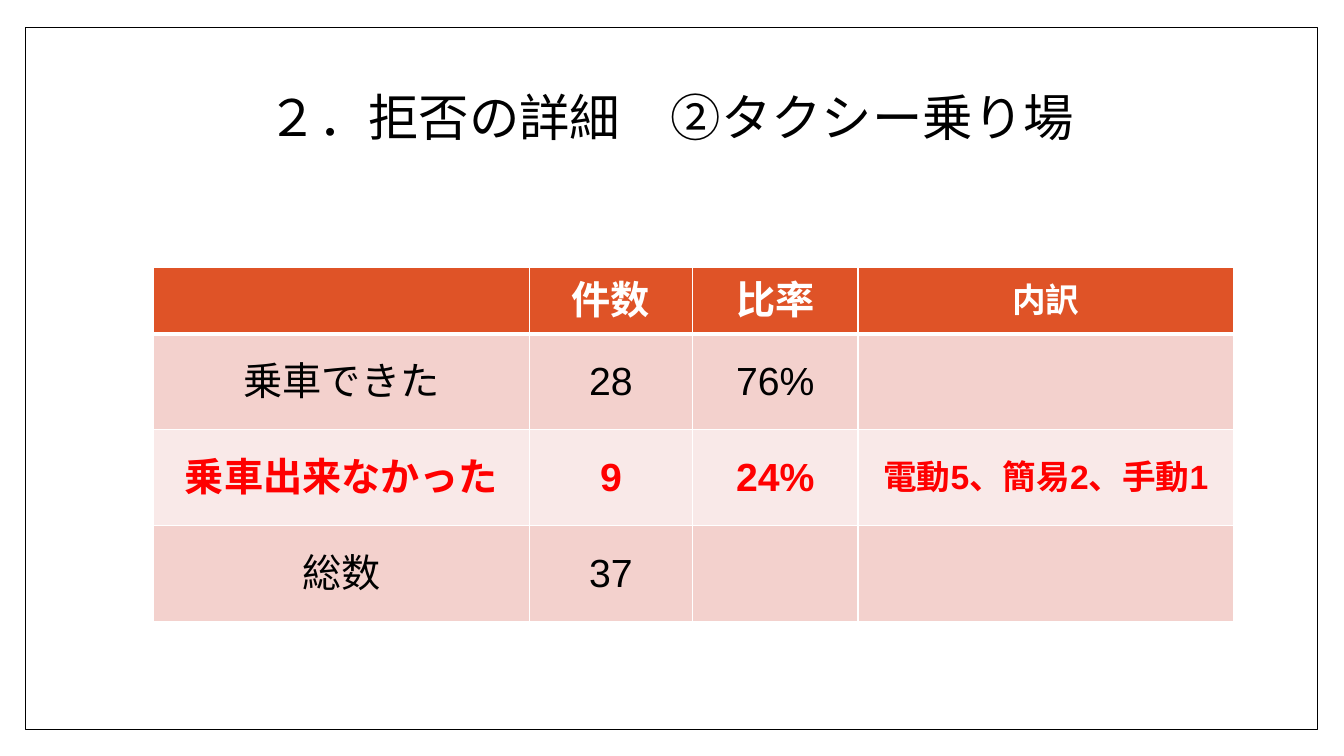
import pptx
import pptx.dml.color
import pptx.enum.shapes
import pptx.enum.text
import pptx.oxml
import pptx.oxml.ns
import pptx.util
from pptx.util import Cm

RGBColor = pptx.dml.color.RGBColor
WHITE = RGBColor(0xFF, 0xFF, 0xFF)
BLACK = RGBColor(0, 0, 0)
RED = RGBColor(0xFF, 0, 0)
ORANGE = RGBColor(0xDF, 0x53, 0x27)
PINK = RGBColor(0xF3, 0xD1, 0xCD)
PALE_PINK = RGBColor(0xF9, 0xE9, 0xE8)

HEADING_FONT, FIGURE_FONT = "Cabin", "Arial"
COLUMN_WIDTHS = (9.47, 4.11, 4.17, 9.47)
HEADER_HEIGHT, BODY_HEIGHT = 1.66, 2.42
# Each row: texts, fill, text colour, bold
ROWS = (
    (("", "件数", "比率", "内訳"), ORANGE, WHITE, True),
    (("乗車できた", "28", "76%", ""), PINK, BLACK, False),
    (("乗車出来なかった", "9", "24%", "電動5、簡易2、手動1"), PALE_PINK, RED, True),
    (("総数", "37", "", ""), PINK, BLACK, False),
)


def add_centred_run(paragraph, text, size, font, color, bold=False):
    paragraph.alignment = pptx.enum.text.PP_ALIGN.CENTER
    run = paragraph.add_run()
    run.text = text
    run.font.size = pptx.util.Pt(size)
    run.font.bold = bold
    run.font.color.rgb = color
    run.font.name = font
    east_asian = pptx.oxml.parse_xml(
        f'<a:ea {pptx.oxml.ns.nsdecls("a")} typeface="{font}"/>')
    run.font._element.append(east_asian)


def set_borders(cell, bottom_width):
    """Draw white cell edges, placed ahead of the fill as the schema asks."""
    properties = cell._tc.get_or_add_tcPr()
    widths = {"lnL": 1, "lnR": 1, "lnT": 1, "lnB": bottom_width}
    for position, (edge, width) in enumerate(widths.items()):
        properties.insert(position, pptx.oxml.parse_xml(
            f'<a:{edge} {pptx.oxml.ns.nsdecls("a")} w="{width * 12700}">'
            f'<a:solidFill><a:srgbClr val="{WHITE}"/></a:solidFill></a:{edge}>'))


def add_frame(slide, left, top, width, height):
    frame = slide.shapes.add_shape(
        pptx.enum.shapes.MSO_SHAPE.RECTANGLE, Cm(left), Cm(top), Cm(width), Cm(height))
    frame.shadow.inherit = False
    frame.fill.solid()
    frame.fill.fore_color.rgb = WHITE
    frame.line.color.rgb = BLACK
    frame.line.width = pptx.util.Pt(1)


def add_title(slide, left, top, width, height):
    title = slide.shapes.add_textbox(Cm(left), Cm(top), Cm(width), Cm(height)).text_frame
    title.word_wrap = True
    title.vertical_anchor = pptx.enum.text.MSO_ANCHOR.MIDDLE
    paragraph = title.paragraphs[0]
    paragraph.line_spacing = 0.9
    add_centred_run(paragraph, "２．拒否の詳細　②タクシー乗り場", 36, HEADING_FONT, BLACK)


def add_refusal_table(slide, left, top):
    height = HEADER_HEIGHT + BODY_HEIGHT * (len(ROWS) - 1)
    table = slide.shapes.add_table(
        len(ROWS), len(COLUMN_WIDTHS), Cm(left), Cm(top),
        Cm(sum(COLUMN_WIDTHS)), Cm(height)).table
    for column, width in zip(table.columns, COLUMN_WIDTHS):
        column.width = Cm(width)
    for row_index, (texts, fill, color, bold) in enumerate(ROWS):
        is_header = row_index == 0
        table.rows[row_index].height = Cm(HEADER_HEIGHT if is_header else BODY_HEIGHT)
        for column_index, text in enumerate(texts):
            cell = table.cell(row_index, column_index)
            cell.fill.solid()
            cell.fill.fore_color.rgb = fill
            set_borders(cell, 3 if is_header else 1)
            cell.vertical_anchor = pptx.enum.text.MSO_ANCHOR.MIDDLE
            if text:
                is_label = is_header or column_index == 0
                is_breakdown = column_index == len(COLUMN_WIDTHS) - 1
                add_centred_run(cell.text_frame.paragraphs[0], text,
                                24 if is_breakdown else 28,
                                HEADING_FONT if is_label else FIGURE_FONT, color, bold)


def main():
    presentation = pptx.Presentation()
    presentation.slide_width = Cm(33.87)
    presentation.slide_height = Cm(19.05)
    slide = presentation.slides.add_slide(presentation.slide_layouts[6])
    add_frame(slide, 0.64, 0.69, 32.56, 17.7)
    add_title(slide, 3.2, 2.16, 27.41, 1.75)
    add_refusal_table(slide, 3.87, 6.75)
    presentation.save("out.pptx")


if __name__ == "__main__":
    main()
